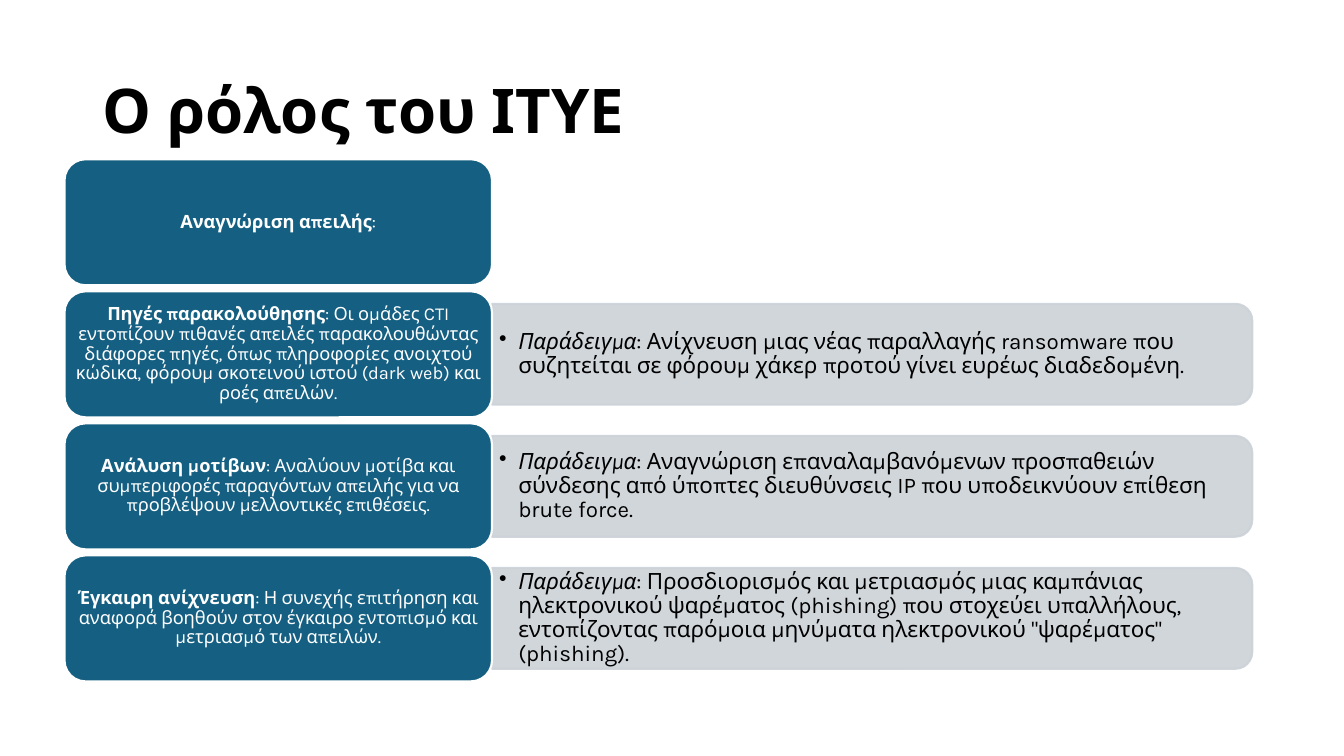
from lxml.etree import SubElement
from pptx import Presentation
from pptx.dml.color import RGBColor
from pptx.enum.shapes import MSO_SHAPE as Shape
from pptx.enum.text import MSO_ANCHOR as Anchor, MSO_AUTO_SIZE as AutoSize, PP_ALIGN as Align
from pptx.oxml.ns import qn
from pptx.util import Inches, Pt

COLOURS = {"card": "156082", "bar": "CCD2D8", "white": "FFFFFF", "black": "000000"}
FONT = "Karla"

# Grid: a column of cards on the left, a column of bars on the right
CARD_LEFT, CARD_WIDTH, CARD_HEIGHT = 0.64, 4.24, 1.25
BAR_LEFT, BAR_WIDTH, BAR_HEIGHT = CARD_LEFT + CARD_WIDTH, 7.54, 1.0
EXAMPLE_WIDTH, EXAMPLE_HEIGHT = 7.49, 0.9
FIRST_ROW, ROW_STEP = 1.58, 1.31

TITLE = "Ο ρόλος του ΙΤΥΕ"
EXAMPLE = "Παράδειγμα"
ROWS = [
    ("Αναγνώριση απειλής", ":", None),
    ("Πηγές παρακολούθησης",
     ": Οι ομάδες CTI εντοπίζουν πιθανές απειλές παρακολουθώντας διάφορες πηγές, όπως "
     "πληροφορίες ανοιχτού κώδικα, φόρουμ σκοτεινού ιστού (dark web) και ροές απειλών.",
     ": Ανίχνευση μιας νέας παραλλαγής ransomware που συζητείται σε φόρουμ χάκερ "
     "προτού γίνει ευρέως διαδεδομένη."),
    ("Ανάλυση μοτίβων",
     ": Αναλύουν μοτίβα και συμπεριφορές παραγόντων απειλής για να προβλέψουν "
     "μελλοντικές επιθέσεις.",
     ": Αναγνώριση επαναλαμβανόμενων προσπαθειών σύνδεσης από ύποπτες διευθύνσεις IP "
     "που υποδεικνύουν επίθεση brute force."),
    ("Έγκαιρη ανίχνευση",
     ": Η συνεχής επιτήρηση και αναφορά βοηθούν στον έγκαιρο εντοπισμό και μετριασμό "
     "των απειλών.",
     ": Προσδιορισμός και μετριασμός μιας καμπάνιας ηλεκτρονικού ψαρέματος (phishing) "
     "που στοχεύει υπαλλήλους, εντοπίζοντας παρόμοια μηνύματα ηλεκτρονικού "
     "\"ψαρέματος\" (phishing)."),
]


def colour(name):
    return RGBColor.from_string(COLOURS[name])


def write_text(frame, spans, *, size, color, align=Align.LEFT, margins=(0.1, 0.05), bullet=False):
    """Fill a frame with one paragraph of (text, bold, italic) spans."""
    frame.word_wrap = True
    frame.auto_size = AutoSize.NONE
    frame.vertical_anchor = Anchor.MIDDLE
    frame.margin_left = frame.margin_right = Inches(margins[0])
    frame.margin_top = frame.margin_bottom = Inches(margins[1])
    para = frame.paragraphs[0]
    if bullet:
        add_bullet(para)
    para.alignment = align
    para.line_spacing = 0.9
    for text, bold, italic in spans:
        span = para.add_run()
        span.text = text
        span.font.name = FONT
        span.font.size = Pt(size)
        span.font.bold = bold
        span.font.italic = italic
        span.font.color.rgb = colour(color)


def add_bullet(para, indent=0.19):
    properties = para._p.get_or_add_pPr()
    properties.set("marL", str(Inches(indent)))
    properties.set("indent", str(-Inches(indent)))
    SubElement(properties, qn("a:buChar")).set("char", "•")


def add_box(page, kind, left, top, width, height, fill, line):
    box = page.shapes.add_shape(kind, *map(Inches, (left, top, width, height)))
    box.shadow.inherit = False
    box.fill.solid()
    box.fill.fore_color.rgb = colour(fill)
    box.line.color.rgb = colour(line)
    box.line.width = Pt(1.5)
    return box


def add_bar(page, middle):
    """Draw a bar with rounded right corners: an upright shape turned by 90 degrees."""
    left = BAR_LEFT + (BAR_WIDTH - BAR_HEIGHT) / 2
    bar = add_box(page, Shape.ROUND_2_SAME_RECTANGLE, left, middle - BAR_WIDTH / 2,
                  BAR_HEIGHT, BAR_WIDTH, "bar", "bar")
    bar.rotation = 90
    for tint in bar._element.spPr.iter(qn("a:srgbClr")):
        SubElement(tint, qn("a:alpha")).set("val", "90000")


def add_example(page, text, middle):
    add_bar(page, middle)
    box = page.shapes.add_textbox(Inches(BAR_LEFT), Inches(middle - EXAMPLE_HEIGHT / 2),
                                  Inches(EXAMPLE_WIDTH), Inches(EXAMPLE_HEIGHT))
    write_text(box.text_frame, [(EXAMPLE, False, True), (text, False, False)],
               size=16, color="black", margins=(0.07, 0.03), bullet=True)


def add_card(page, heading, text, top):
    card = add_box(page, Shape.ROUNDED_RECTANGLE, CARD_LEFT, top,
                   CARD_WIDTH, CARD_HEIGHT, "card", "white")
    write_text(card.text_frame, [(heading, True, False), (text, False, False)],
               size=13, color="white", align=Align.CENTER, margins=(0.05, 0.03))


def add_title(page):
    title = page.shapes.title
    title.left, title.top, title.width, title.height = map(Inches, (0.92, 0.4, 11.5, 1.45))
    write_text(title.text_frame, [(TITLE, True, False)], size=44, color="black")


def main():
    deck = Presentation()
    deck.slide_width, deck.slide_height = Inches(13.33), Inches(7.5)
    page = deck.slides.add_slide(deck.slide_layouts[5])
    add_title(page)
    for row, (heading, text, example) in enumerate(ROWS):
        top = FIRST_ROW + row * ROW_STEP
        if example:
            add_example(page, example, top + CARD_HEIGHT / 2)
        add_card(page, heading, text, top)
    deck.save("out.pptx")


if __name__ == "__main__":
    main()
